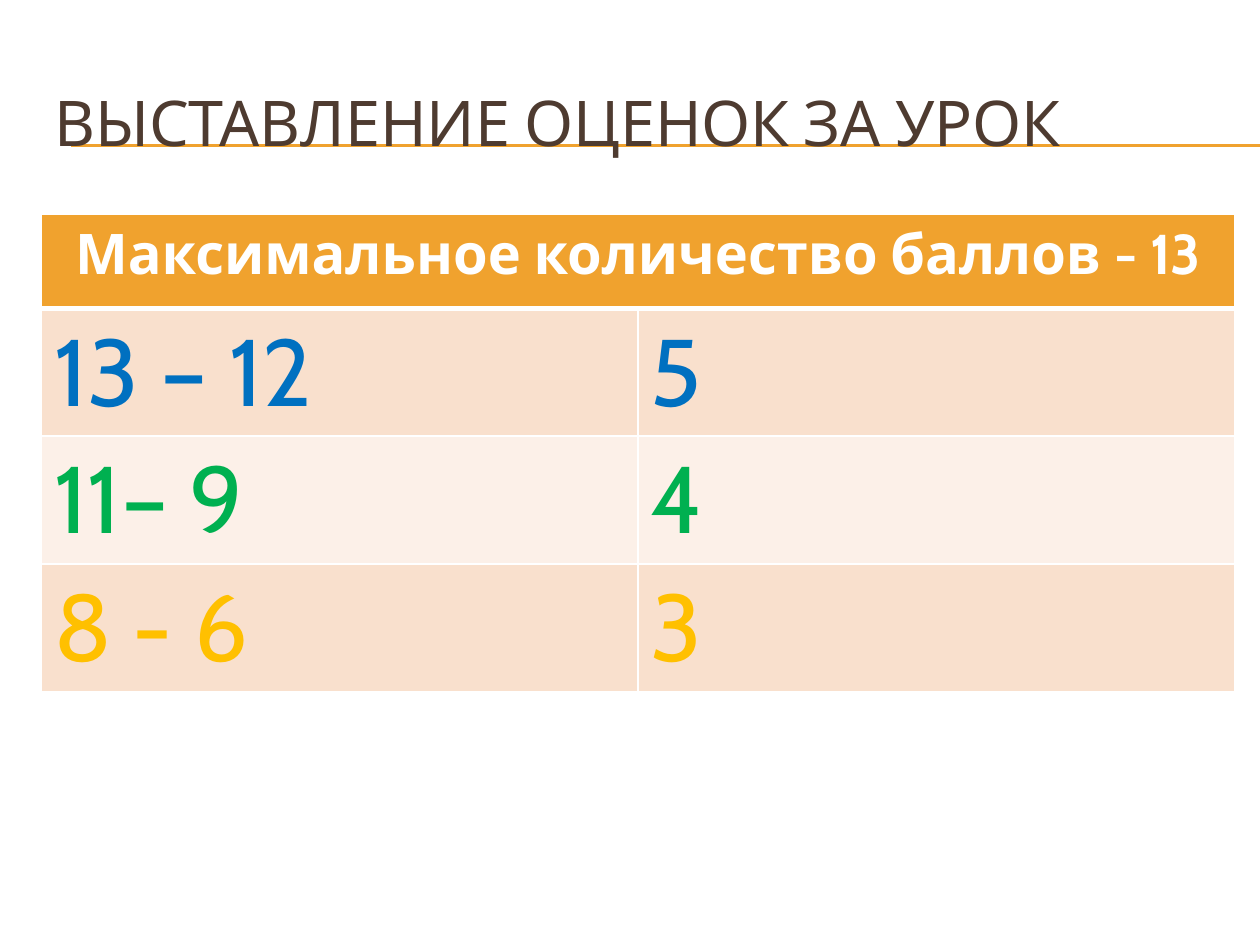
from lxml import etree
from pptx import Presentation
from pptx.dml.color import RGBColor
from pptx.enum.shapes import MSO_CONNECTOR
from pptx.enum.text import MSO_ANCHOR, PP_ALIGN
from pptx.oxml.ns import qn
from pptx.util import Inches, Pt

STRAIGHT = MSO_CONNECTOR.STRAIGHT
MIDDLE = MSO_ANCHOR.MIDDLE
LEFT, CENTER = PP_ALIGN.LEFT, PP_ALIGN.CENTER

FONT = "Cabin"
ORANGE, BROWN, WHITE = "F0A22E", "4E3B30", "FFFFFF"
BANDS = ["F9E0CD", "FCF0E8"]
TITLE = "ВЫСТАВЛЕНИЕ ОЦЕНОК ЗА УРОК"
HEADER = "Максимальное количество баллов - 13"
# Points range, grade, text colour
GRADES = [
    ("13 – 12", "5", "0070C0"),
    ("11– 9", "4", "00B050"),
    ("8 - 6", "3", "FFC000"),
]


def rgb(color):
    return RGBColor.from_string(color)


def add_text(frame, text, size, color, bold=False, align=LEFT):
    paragraph = frame.paragraphs[0]
    paragraph.alignment = align
    run = paragraph.add_run()
    run.text = text
    run.font.name = FONT
    run.font.size = Pt(size)
    run.font.bold = bold
    run.font.color.rgb = rgb(color)


def add_rule(slide, y):
    """Thin line to the right slide edge, behind the title."""
    rule = slide.shapes.add_connector(
        STRAIGHT, Inches(0.56), Inches(y), Inches(10), Inches(y))
    rule.line.color.rgb = rgb(ORANGE)
    rule.line.width = Pt(0.75)
    etree.SubElement(rule._element.spPr, qn("a:effectLst"))
    slide.shapes._spTree.insert(2, rule._element)


def add_title(slide):
    title = slide.shapes.title
    title.left, title.top = Inches(0.33), Inches(0.5)
    title.width, title.height = Inches(9.5), Inches(0.92)
    title.text_frame.vertical_anchor = MIDDLE
    add_text(title.text_frame, TITLE, 36, BROWN)


def set_borders(cell, top=1, bottom=1):
    properties = cell._tc.get_or_add_tcPr()
    for side, width in (("L", 1), ("R", 1), ("T", top), ("B", bottom)):
        border = etree.SubElement(properties, qn(f"a:ln{side}"), w=str(Pt(width)))
        fill = etree.SubElement(border, qn("a:solidFill"))
        etree.SubElement(fill, qn("a:srgbClr"), val=WHITE)


def fill_cell(cell, color):
    cell.fill.solid()
    cell.fill.fore_color.rgb = rgb(color)


def add_grade_table(slide):
    table = slide.shapes.add_table(
        len(GRADES) + 1, 2, Inches(0.33), Inches(1.7),
        Inches(9.47), Inches(3.75)).table
    table.rows[0].height = Inches(0.75)

    # Header across both columns
    header = table.cell(0, 0)
    header.merge(table.cell(0, 1))
    for cell in table.rows[0].cells:
        set_borders(cell, bottom=3)
        fill_cell(cell, ORANGE)
    add_text(header.text_frame, HEADER, 32, WHITE, bold=True, align=CENTER)

    # One banded row per grade
    for index, (points, grade, color) in enumerate(GRADES):
        row = table.rows[index + 1]
        row.height = Inches(1)
        for cell, text in zip(row.cells, (points, grade)):
            set_borders(cell, top=3 if index == 0 else 1)
            fill_cell(cell, BANDS[index % 2])
            add_text(cell.text_frame, text, 54, color)


def main():
    prs = Presentation()
    prs.slide_width, prs.slide_height = Inches(10), Inches(7.5)
    slide = prs.slides.add_slide(prs.slide_layouts[5])
    for y in (1.16, 1.15):
        add_rule(slide, y)
    add_title(slide)
    add_grade_table(slide)
    prs.save("out.pptx")


if __name__ == "__main__":
    main()
